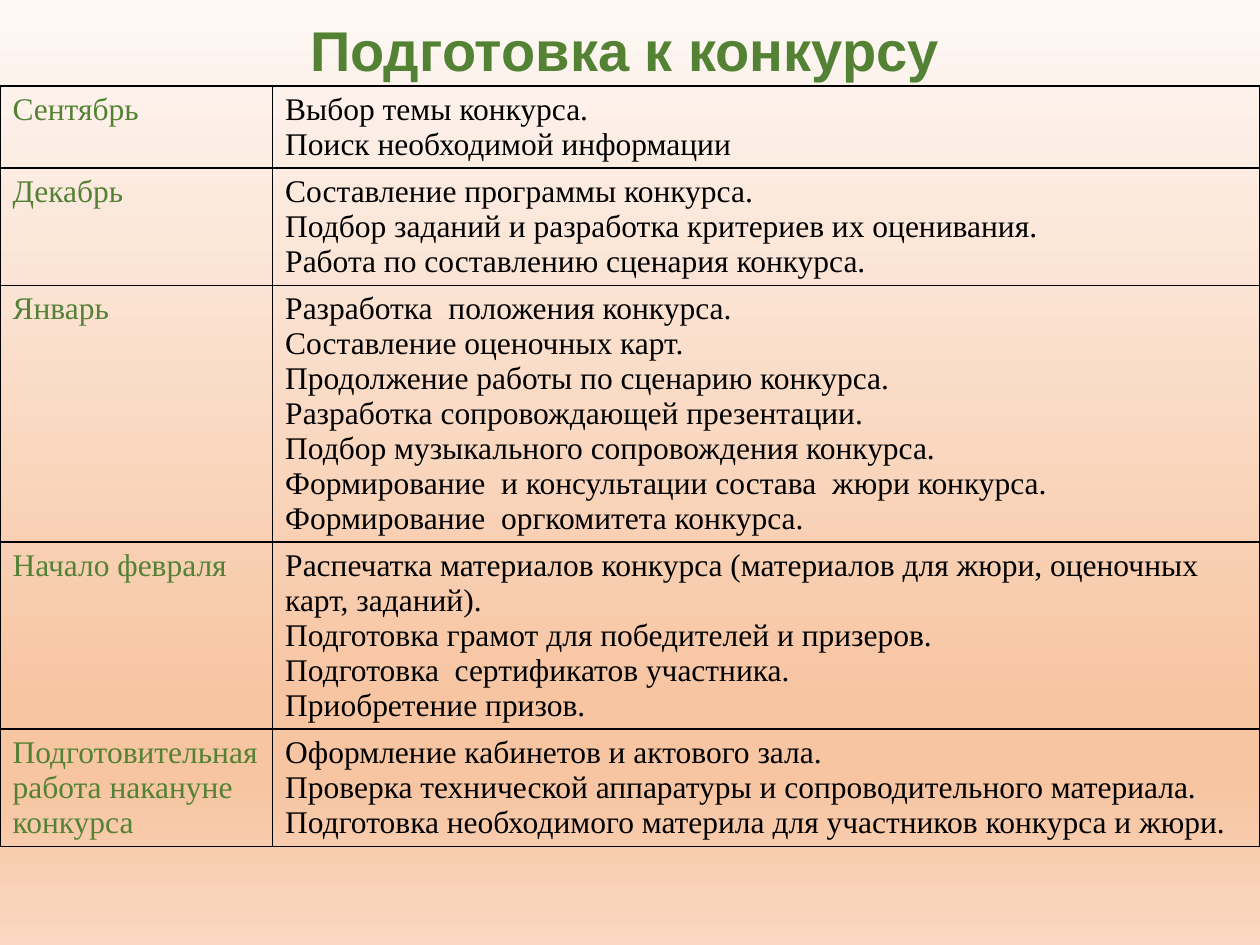
from lxml.etree import SubElement
from pptx import Presentation
from pptx.dml.color import RGBColor
from pptx.enum.text import MSO_ANCHOR, MSO_AUTO_SIZE, PP_ALIGN
from pptx.oxml.ns import qn
from pptx.util import Pt

COLORS = {"green": "548235", "black": "000000"}
GRADIENT = [(0, "FEF8F5"), (74, "F7C5A2"), (83, "F7C5A2"), (100, "FAD8C1")]
TITLE = "Подготовка к конкурсу"
PLAN = [
    ("Сентябрь", 2, [
        "Выбор темы конкурса.",
        "Поиск необходимой информации",
    ]),
    ("Декабрь", 3, [
        "Составление программы конкурса.",
        "Подбор заданий и разработка критериев их оценивания.",
        "Работа по составлению сценария конкурса.",
    ]),
    ("Январь", 7, [
        "Разработка  положения конкурса.",
        "Составление оценочных карт.",
        "Продолжение работы по сценарию конкурса.",
        "Разработка сопровождающей презентации.",
        "Подбор музыкального сопровождения конкурса.",
        "Формирование  и консультации состава  жюри конкурса.",
        "Формирование  оргкомитета конкурса.",
    ]),
    ("Начало февраля", 5, [
        "Распечатка материалов конкурса (материалов для жюри, оценочных карт, заданий).",
        "Подготовка грамот для победителей и призеров.",
        "Подготовка  сертификатов участника.",
        "Приобретение призов.",
    ]),
    ("Подготовительная работа накануне конкурса", 3, [
        "Оформление кабинетов и актового зала.",
        "Проверка технической аппаратуры и сопроводительного материала.",
        "Подготовка необходимого материла для участников конкурса и жюри.",
    ]),
]
COL_WIDTHS = [155.8, 564.2]
LINE_HEIGHT, CELL_PADDING = 19.9, 7.2


def write(tf, lines, size=18, font="Times New Roman", color="black", bold=False, align=PP_ALIGN.LEFT):
    for i, line in enumerate(lines):
        p = tf.paragraphs[0] if i == 0 else tf.add_paragraph()
        p.alignment = align
        p.space_before = Pt(0)
        r = p.add_run()
        r.text = line
        r.font.size = Pt(size)
        r.font.name = font
        r.font.bold = bold
        r.font.color.rgb = RGBColor.from_string(COLORS[color])


def set_borders(cell, color, width):
    tcPr = cell._tc.get_or_add_tcPr()
    for side in ("a:lnL", "a:lnR", "a:lnT", "a:lnB"):
        ln = SubElement(tcPr, qn(side), w=str(Pt(width)))
        fill = SubElement(ln, qn("a:solidFill"))
        SubElement(fill, qn("a:srgbClr"), val=COLORS[color])


def set_background(s, stops):
    fill = s.background.fill
    fill.gradient()
    fill.gradient_angle = 270
    gs_list = s.element.find(".//" + qn("a:gsLst"))
    for gs in list(gs_list):
        gs_list.remove(gs)
    for pos, color in stops:
        gs = SubElement(gs_list, qn("a:gs"), pos=str(pos * 1000))
        SubElement(gs, qn("a:srgbClr"), val=color)


def add_plan(s):
    heights = [CELL_PADDING + LINE_HEIGHT * n for _, n, _ in PLAN]
    frame = s.shapes.add_table(len(PLAN), 2, Pt(0), Pt(49), Pt(sum(COL_WIDTHS)), Pt(sum(heights)))
    table = frame.table
    table.first_row = False
    table.horz_banding = False
    for col, width in zip(table.columns, COL_WIDTHS):
        col.width = Pt(width)
    for row, height, (period, _, tasks) in zip(table.rows, heights, PLAN):
        row.height = Pt(height)
        for cell, lines, color in zip(row.cells, ([period], tasks), ("green", "black")):
            write(cell.text_frame, lines, color=color)
            set_borders(cell, "black", 1)
            cell.fill.background()


def add_title(s):
    title = s.shapes.title
    title.left, title.top, title.width, title.height = Pt(25.6), Pt(5), Pt(663), Pt(44)
    tf = title.text_frame
    tf.word_wrap = True
    tf.auto_size = MSO_AUTO_SIZE.SHAPE_TO_FIT_TEXT
    tf.vertical_anchor = MSO_ANCHOR.TOP
    tf.margin_top = tf.margin_bottom = Pt(3.6)
    write(tf, [TITLE], size=32, font="Arial", color="green", bold=True, align=PP_ALIGN.CENTER)
    title.element.getparent().append(title.element)


def main():
    prs = Presentation()
    prs.slide_width, prs.slide_height = Pt(720), Pt(540)
    s = prs.slides.add_slide(prs.slide_layouts[5])
    set_background(s, GRADIENT)
    add_plan(s)
    add_title(s)
    prs.save("out.pptx")


if __name__ == "__main__":
    main()
